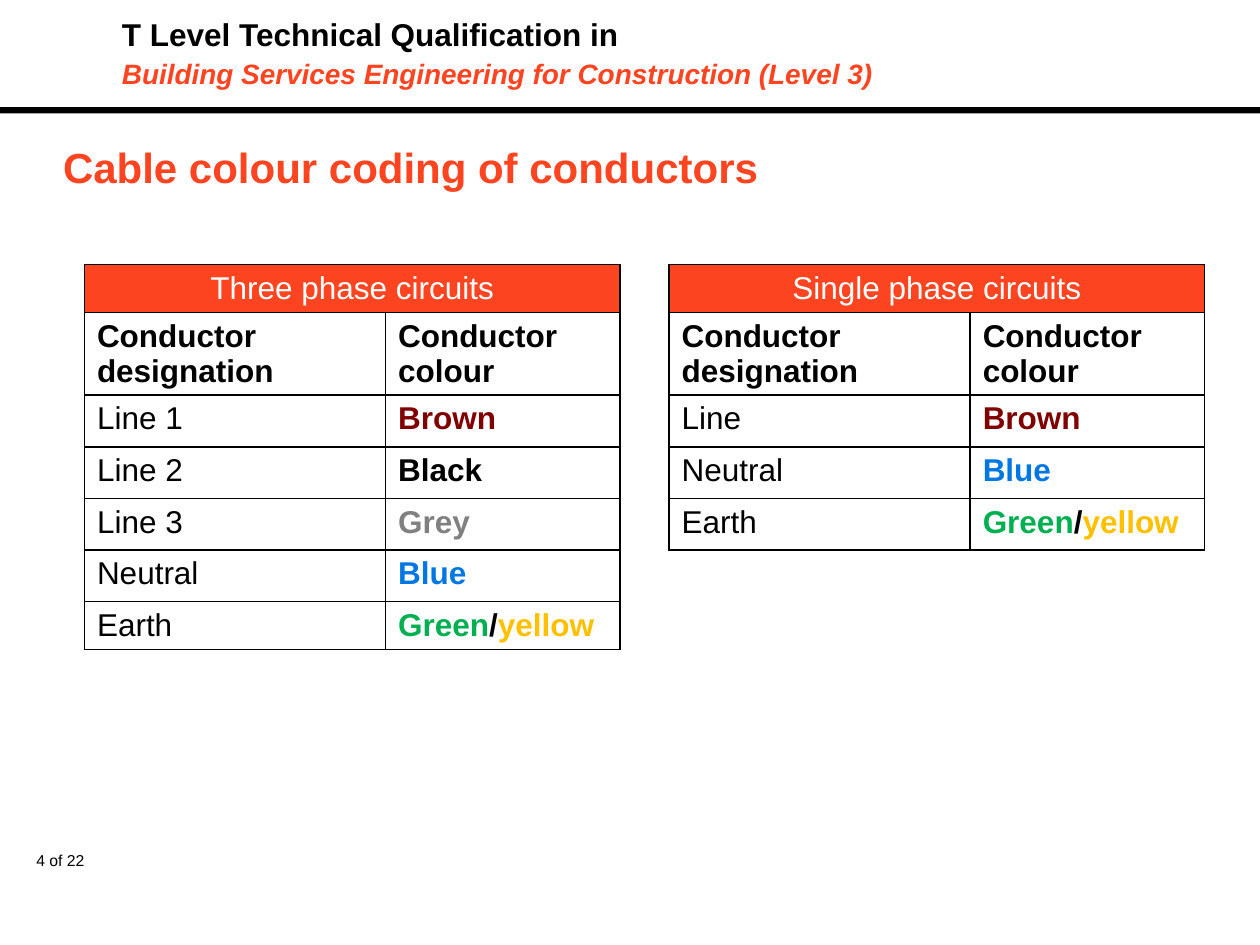
import pptx
import pptx.util
import pptx.dml.color
import pptx.enum.shapes
import pptx.enum.text
import pptx.oxml
import pptx.oxml.ns
from pptx.util import Inches

COLOURS = {
    "accent": "FC4421", "text": "000000", "white": "FFFFFF", "/": "000000",
    "Brown": "800000", "Black": "000000", "Grey": "808080", "Blue": "0077E3",
    "Green": "00B050", "yellow": "FFC000",
}
ALIGN = pptx.enum.text.PP_ALIGN


def set_font(font, size, colour, bold=False, italic=False):
    font.name = "Arial"
    font.size = pptx.util.Pt(size)
    font.bold = bold
    font.italic = italic
    font.color.rgb = pptx.dml.color.RGBColor.from_string(COLOURS[colour])


def add_borders(cell):
    properties = cell._tc.get_or_add_tcPr()
    for position, side in enumerate(("lnL", "lnR", "lnT", "lnB")):
        properties.insert(position, pptx.oxml.parse_xml(
            f'<a:{side} {pptx.oxml.ns.nsdecls("a")} w="12700"><a:solidFill>'
            f'<a:srgbClr val="{COLOURS["text"]}"/></a:solidFill></a:{side}>'))


deck = pptx.Presentation()
deck.slide_width, deck.slide_height = Inches(10), Inches(7.5)
page = deck.slides.add_slide(deck.slide_layouts[5])

# Header bar
bar = page.shapes.add_shape(
    pptx.enum.shapes.MSO_SHAPE.RECTANGLE, 0, Inches(0.85), Inches(10), Inches(0.05))
bar.shadow.inherit = False
bar.fill.solid()
bar.fill.fore_color.rgb = pptx.dml.color.RGBColor.from_string(COLOURS["text"])
bar.line.fill.background()

# Qualification name
header = page.shapes.add_textbox(Inches(0.87), Inches(0.19), Inches(6.26), Inches(0.65))
frame = header.text_frame
frame.word_wrap = True
frame.text = ("T Level Technical Qualification in\n"
              "Building Services Engineering for Construction (Level 3)")
for para in frame.paragraphs:
    para.line_spacing = pptx.util.Pt(13)
    para.space_after = pptx.util.Pt(4)
first, second = frame.paragraphs
second.space_before = pptx.util.Pt(4)
set_font(first.font, 18, "text", bold=True)
set_font(second.font, 16, "accent", bold=True, italic=True)

# Page number
number = page.shapes.add_textbox(Inches(0.19), Inches(6.75), Inches(0.48), Inches(0.25))
number.text_frame.text = "4 of 22"

# Title
title = page.shapes.title
title.left, title.top, title.width, title.height = (
    Inches(0.5), Inches(1.1), Inches(9), Inches(0.42))
title.text_frame.text = "Cable colour coding of conductors"
title.text_frame.vertical_anchor = pptx.enum.text.MSO_ANCHOR.BOTTOM

for box, align, size, colour, bold in (
        (number, ALIGN.RIGHT, 9, "text", False),
        (title, ALIGN.LEFT, 24, "accent", True)):
    frame = box.text_frame
    frame.word_wrap = True
    frame.auto_size = pptx.enum.text.MSO_AUTO_SIZE.NONE
    frame.margin_left = frame.margin_right = frame.margin_top = frame.margin_bottom = 0
    para = frame.paragraphs[0]
    para.alignment = align
    set_font(para.font, size, colour, bold)

# Conductor tables: each colour is a list of words in their own colour
earth = ("Earth", ["Green", "/", "yellow"])
neutral = ("Neutral", ["Blue"])
tables = (
    (0.67, "Three phase circuits", [0.41] * 4 + [0.38],
     [("Line 1", ["Brown"]), ("Line 2", ["Black"]), ("Line 3", ["Grey"]), neutral, earth]),
    (5.31, "Single phase circuits", [0.41] * 3, [("Line", ["Brown"]), neutral, earth]),
)
for left, heading, body_heights, conductors in tables:
    heights = [0.38, 0.65] + body_heights
    table = page.shapes.add_table(
        len(heights), 2, Inches(left), Inches(2.1), Inches(4.25), Inches(sum(heights))).table
    table.first_row = table.horz_banding = False
    for column, width in zip(table.columns, (2.39, 1.86)):
        column.width = Inches(width)
    for row, height in zip(table.rows, heights):
        row.height = Inches(height)

    table.cell(0, 0).merge(table.cell(0, 1))
    table.cell(0, 0).text = heading
    table.cell(1, 0).text = "Conductor designation"
    table.cell(1, 1).text = "Conductor colour"
    for index, (designation, words) in enumerate(conductors, start=2):
        table.cell(index, 0).text = designation
        para = table.cell(index, 1).text_frame.paragraphs[0]
        for word in words:
            span = para.add_run()
            span.text = word
            set_font(span.font, 18, word, bold=True)

    for index in range(len(heights)):
        for side in range(2):
            cell = table.cell(index, side)
            para = cell.text_frame.paragraphs[0]
            para.line_spacing = pptx.util.Pt(20)
            if index == 0:
                para.alignment = ALIGN.CENTER
                cell.fill.solid()
                cell.fill.fore_color.rgb = pptx.dml.color.RGBColor.from_string(COLOURS["accent"])
            else:
                cell.fill.background()
            if index < 2 or side == 0:
                set_font(para.font, 18, "white" if index == 0 else "text", bold=index == 1)
            add_borders(cell)

deck.save("out.pptx")
